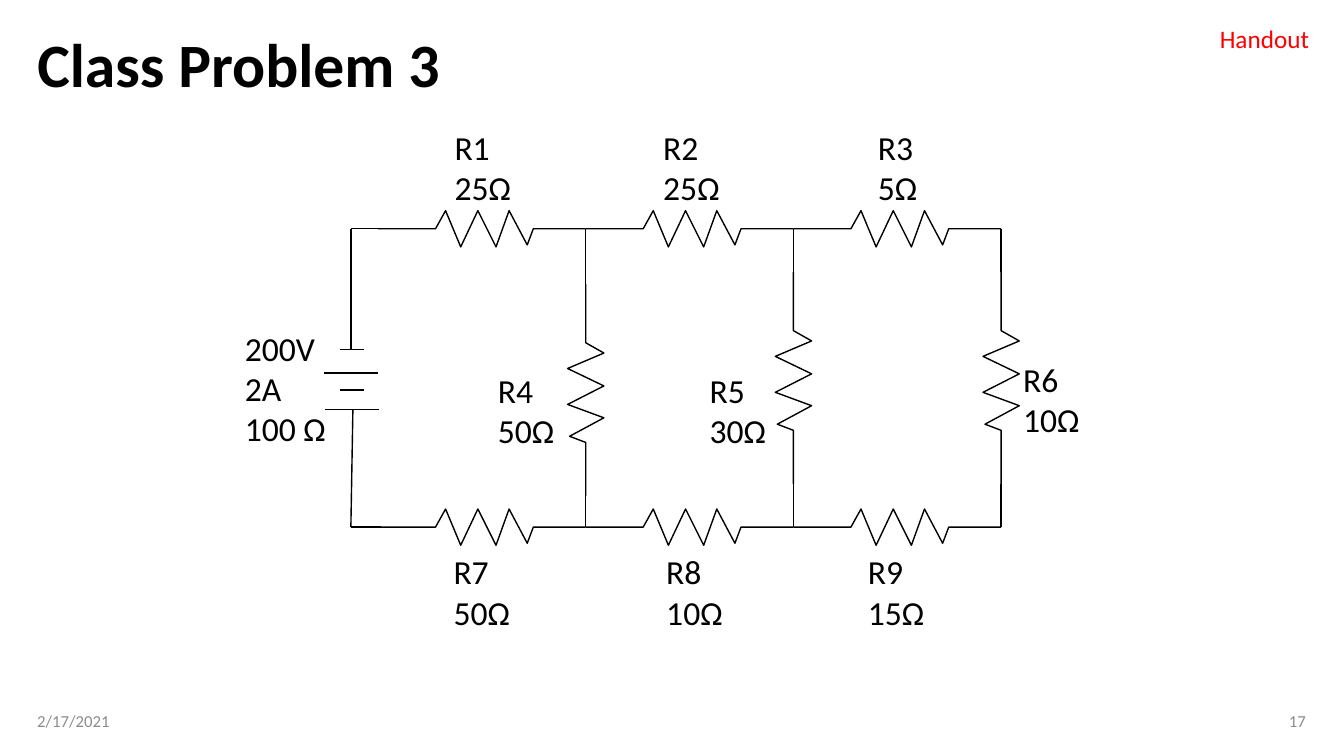
from lxml import etree
from pptx import Presentation
from pptx.dml.color import RGBColor
from pptx.enum.shapes import MSO_CONNECTOR
from pptx.enum.text import MSO_ANCHOR, MSO_AUTO_SIZE, PP_ALIGN
from pptx.oxml.ns import qn
from pptx.util import Inches, Pt

LINE = MSO_CONNECTOR.STRAIGHT
MIDDLE = MSO_ANCHOR.MIDDLE
LEFT, RIGHT = PP_ALIGN.LEFT, PP_ALIGN.RIGHT
FIT, FIXED = MSO_AUTO_SIZE.SHAPE_TO_FIT_TEXT, MSO_AUTO_SIZE.NONE
FONT = "Calibri"
BLACK, RED, GRAY = "000000", "FF0000", "8C8C8C"

# Resistor outline: distance along the wire, distance across it
ZIGZAG = [(0, 0), (0.57, 0), (0.67, -0.18), (0.82, 0.18), (0.99, -0.18),
          (1.17, 0.18), (1.3, -0.18), (1.48, 0.16), (1.54, 0), (2.06, 0)]
SPAN = 2.06


def color(code):
    return RGBColor.from_string(code)


def write(frame, lines, size, tint=BLACK, align=LEFT, bold=False):
    for i, line in enumerate(lines):
        para = frame.paragraphs[0] if i == 0 else frame.add_paragraph()
        para.alignment = align
        run = para.add_run()
        run.text = line
        font = run.font
        font.name, font.size, font.bold = FONT, Pt(size), bold
        font.color.rgb = color(tint)


def place(shape, box):
    shape.left, shape.top, shape.width, shape.height = map(Inches, box)


def label(slide, box, lines, size=24, tint=BLACK):
    frame = slide.shapes.add_textbox(*map(Inches, box)).text_frame
    frame.word_wrap = False
    frame.auto_size = FIT
    write(frame, lines, size, tint)


def wire(slide, x1, y1, x2, y2):
    line = slide.shapes.add_connector(LINE, *map(Inches, (x1, y1, x2, y2)))
    line.line.color.rgb = color(BLACK)
    line.line.width = Pt(1)
    etree.SubElement(line._element.spPr, qn("a:effectLst"))


def resistor(slide, x, y, span=SPAN, upright=False):
    points = []
    for along, across in ZIGZAG:
        along *= span / SPAN
        dx, dy = (-across, along) if upright else (along, across)
        points.append((Inches(x + dx), Inches(y + dy)))
    pen = slide.shapes.build_freeform(*points[0])
    pen.add_line_segments(points[1:], close=False)
    shape = pen.convert_to_shape()
    shape.fill.background()
    shape.line.color.rgb = color(BLACK)
    shape.line.width = Pt(1)
    shape.shadow.inherit = False


def header(slide, box):
    left, top, width, height = box
    title = slide.shapes.title
    place(title, (left, top, 5.62, height))
    frame = title.text_frame
    frame.auto_size = FIXED
    frame.vertical_anchor = MIDDLE
    write(frame, ["Class Problem 3"], 44, bold=True)
    frame.paragraphs[0].line_spacing = 0.9
    label(slide, (left + width - 1.1, top - 0.09, 1.1, 0.4),
          ["Handout"], 18, RED)


def footer(slide, box):
    left, top, width, height = box
    half = 3.65
    for x, text, align in ((left, "2/17/2021", LEFT),
                           (left + width - half, "17", RIGHT)):
        note = slide.shapes.add_textbox(*map(Inches, (x, top, half, height)))
        frame = note.text_frame
        frame.word_wrap = True
        frame.vertical_anchor = MIDDLE
        write(frame, [text], 12, GRAY, align)


def battery(slide, x, top, low):
    # Plates: centre offset, height, half width
    for dx, y, half in ((0.01, 3.47, 0.12), (0, 3.7, 0.265),
                        (0.01, 3.87, 0.12), (0.01, 4.06, 0.265)):
        wire(slide, x + dx - half, y, x + dx + half, y)
    # Leads to the top and bottom rails
    wire(slide, x, top, x, 3.47)
    wire(slide, x + 0.02, 4.06, x, low)
    for y in (top, low):
        wire(slide, x, y, x + 0.3, y)
    label(slide, (x - 1.15, 3.2, 1.01, 1.31), ["200V", "2A", "100 Ω"])


def circuit(slide, box):
    left, top, width, height = box
    low, right = top + height, left + width
    # Top and bottom rails
    for i in range(3):
        for y in (top, low):
            resistor(slide, right - (3 - i) * SPAN, y)
    # Branches: lead-in length for R4, R5 and R6
    for i, lead in enumerate((0.55, 0.43, 0.43)):
        x = right - (2 - i) * SPAN
        start, end = top + lead, top + lead + 2.1
        wire(slide, x, top, x, start)
        resistor(slide, x, start, 2.1, True)
        wire(slide, x, end, x, low)
    battery(slide, left, top, low)
    # Values
    for name, ohms, x, y, wide in (
            ("R1", 25, 4.41, 1.21, 0.77), ("R2", 25, 6.48, 1.21, 0.77),
            ("R3", 5, 8.61, 1.21, 0.6), ("R4", 50, 4.84, 3.62, 0.77),
            ("R5", 30, 6.94, 3.62, 0.77), ("R6", 10, 10.05, 3.51, 0.77),
            ("R7", 50, 4.4, 5.42, 0.77), ("R8", 10, 6.51, 5.42, 0.77),
            ("R9", 15, 8.51, 5.42, 0.77)):
        label(slide, (x, y, wide, 0.91), [name, f"{ohms}Ω"])


def main():
    deck = Presentation()
    deck.slide_width, deck.slide_height = Inches(13.33), Inches(7.5)
    slide = deck.slides.add_slide(deck.slide_layouts[5])
    header(slide, (0.27, 0.27, 12.83, 0.8))
    circuit(slide, (3.48, 2.27, 6.45, 2.96))
    footer(slide, (0.27, 6.95, 12.78, 0.4))
    deck.save("out.pptx")


if __name__ == "__main__":
    main()
